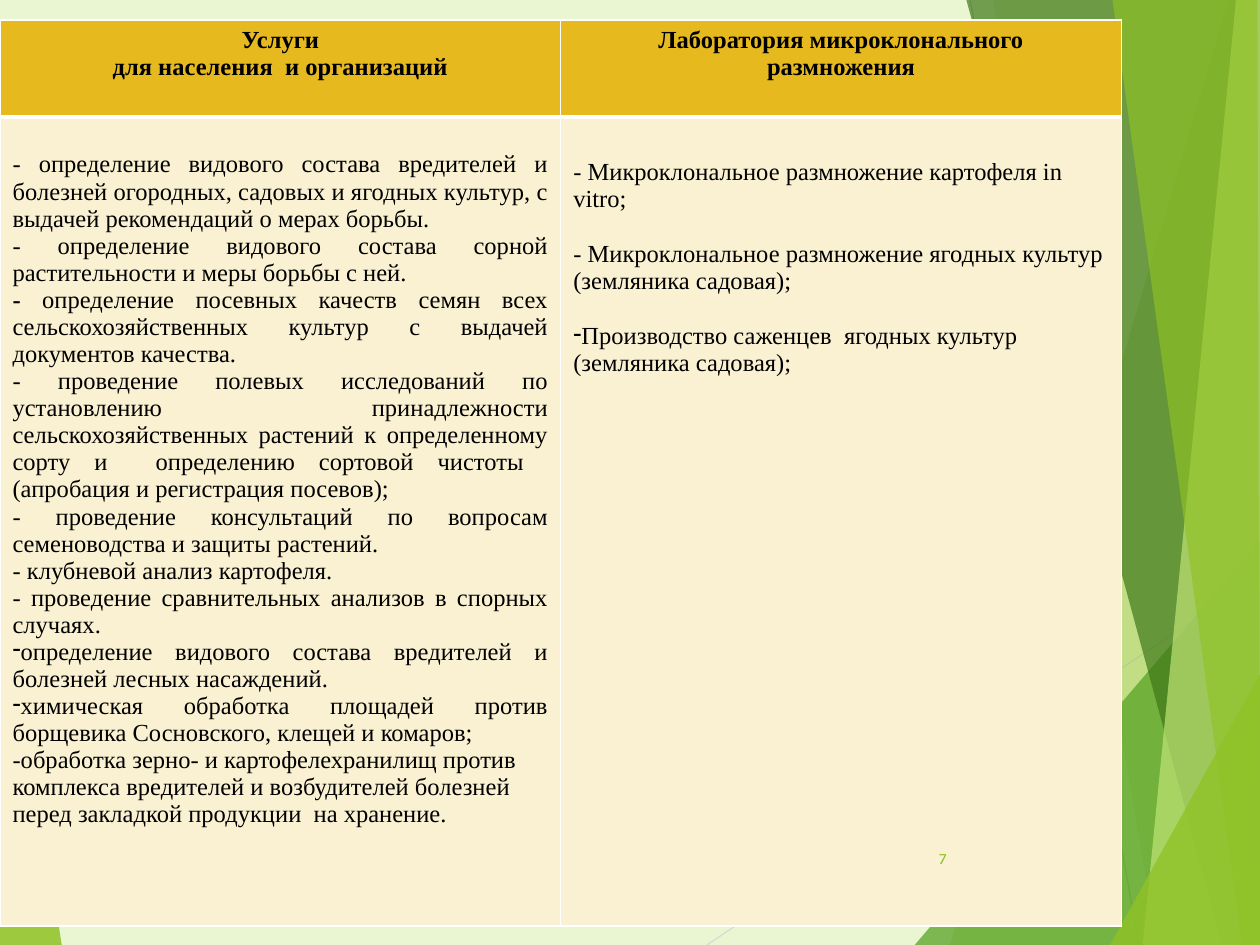
from typing import NamedTuple

from lxml import etree
from pptx import Presentation
from pptx import util as u
from pptx.dml.color import RGBColor
from pptx.enum import shapes, text
from pptx.oxml import ns

HEX = {
    "back": "EAF6D1", "lime": "90C226", "leaf": "54A021", "moss": "3F7819",
    "pale": "C0E474", "grey": "D9D9D9", "dusk": "BFBFBF", "gold": "E6B91E",
    "cream": "FAF1D2", "white": "FFFFFF", "black": "000000",
}
SERIF = "Times New Roman"
LEFT, MID, RIGHT = text.PP_ALIGN.LEFT, text.PP_ALIGN.CENTER, text.PP_ALIGN.RIGHT
JUST = text.PP_ALIGN.JUSTIFY


class Facet(NamedTuple):
    tint: str
    alpha: int
    spots: list[tuple[float, float]]


class Ray(NamedTuple):
    tint: str
    start: tuple[float, float]
    end: tuple[float, float]


class Run(NamedTuple):
    words: str
    bold: bool = False


class Para(NamedTuple):
    runs: list[Run]
    align: int = LEFT
    dash: bool = False
    gap: float = 0


class Cell(NamedTuple):
    fill: str
    paras: list[Para]
    top: float = 0.05


RAYS = [
    Ray("grey", (5.61, 7.5), (10, 4.57)),
    Ray("dusk", (7.7, 0), (9.04, 7.5)),
]
CORNER = Facet("lime", 85, [(0, 4.39), (0.49, 7.5), (0, 7.5)])
FACETS = [
    Facet("lime", 30, [(9.75, 0), (7.54, 7.5), (10, 7.5), (10, 0)]),
    Facet("lime", 20, [(7.88, 0), (9.19, 7.5), (10, 7.5), (10, 0)]),
    Facet("leaf", 72, [(7.26, 7.5), (10, 4.29), (10, 7.5)]),
    Facet("moss", 70, [(7.67, 0), (9.7, 7.5), (10, 7.5), (10, 0)]),
    Facet("pale", 70, [(9.81, 0), (9.07, 7.5), (10, 7.5), (10, 0)]),
    Facet("lime", 65, [(8.83, 0), (9.86, 7.5), (10, 7.5), (9.98, 0)]),
    Facet("lime", 80, [(8.81, 7.5), (10, 5.35), (10, 7.5)]),
]


def head(*lines: str) -> Cell:
    return Cell("gold", [Para([Run(line, True)], MID) for line in lines])


def just(words: str, dash: bool = False) -> Para:
    return Para([Run(words)], JUST, dash)


TASKS = [
    just("- определение видового состава вредителей и болезней огородных, садовых "
         "и ягодных культур, с выдачей рекомендаций о мерах борьбы."),
    just("- определение видового состава сорной растительности и меры борьбы с ней."),
    Para([Run("-", True),
          Run(" определение посевных качеств семян всех сельскохозяйственных "
              "культур с выдачей документов качества.")], JUST),
    just("- проведение полевых исследований по установлению принадлежности "
         "сельскохозяйственных растений к определенному сорту и  определению "
         "сортовой чистоты  (апробация и регистрация посевов);"),
    just("- проведение консультаций по вопросам семеноводства и защиты растений."),
    just("- клубневой анализ картофеля."),
    just("- проведение сравнительных анализов в спорных случаях."),
    just("определение видового состава вредителей и болезней лесных насаждений.", True),
    just("химическая обработка площадей против борщевика Сосновского, "
         "клещей и комаров;", True),
    Para([Run("-обработка зерно- и картофелехранилищ против комплекса вредителей "
              "и возбудителей болезней перед закладкой продукции  на хранение.")]),
]
LAB = [
    Para([Run("- Микроклональное размножение картофеля in vitro;")]),
    Para([Run("- Микроклональное размножение ягодных культур "
              "(земляника садовая);")], gap=16),
    Para([Run("Производство саженцев  ягодных культур "
              "(земляника садовая);")], dash=True, gap=16),
]
GRID = [
    [head("Услуги", "для населения  и организаций"),
     head("Лаборатория микроклонального", "размножения")],
    [Cell("cream", TASKS, 0.27), Cell("cream", LAB, 0.33)],
]


def paint(fill, tint: str) -> None:
    fill.solid()
    fill.fore_color.rgb = RGBColor.from_string(HEX[tint])


def draw_facet(slide, facet: Facet) -> None:
    spots = [(u.Inches(x), u.Inches(y)) for x, y in facet.spots]
    pen = slide.shapes.build_freeform(*spots[0])
    pen.add_line_segments(spots[1:], close=True)
    shape = pen.convert_to_shape()
    shape.shadow.inherit = False
    paint(shape.fill, facet.tint)
    shape.line.fill.background()
    tone = shape.fill._xPr.find(".//" + ns.qn("a:srgbClr"))
    etree.SubElement(tone, ns.qn("a:alpha"), val=str(facet.alpha * 1000))


def draw_ray(slide, ray: Ray) -> None:
    ends = [u.Inches(v) for v in ray.start + ray.end]
    line = slide.shapes.add_connector(shapes.MSO_CONNECTOR.STRAIGHT, *ends)
    paint(line.line.fill, ray.tint)
    line.line.width = u.Pt(0.75)
    etree.SubElement(line._element.spPr, ns.qn("a:effectLst"))


def add_run(para, run: Run, size: float, face: str, tint: str) -> None:
    part = para.add_run()
    part.text = run.words
    part.font.size, part.font.name = u.Pt(size), face
    part.font.bold = run.bold
    part.font.color.rgb = RGBColor.from_string(HEX[tint])


def write(frame, paras: list[Para], size: float, face: str, tint: str) -> None:
    for i, item in enumerate(paras):
        para = frame.add_paragraph() if i else frame.paragraphs[0]
        para.alignment = item.align
        if item.gap:
            para.space_before = u.Pt(item.gap)
        if item.dash:
            props = para._p.get_or_add_pPr()
            props.set("marL", "0")
            props.set("indent", "0")
            etree.SubElement(props, ns.qn("a:buFontTx"))
            etree.SubElement(props, ns.qn("a:buChar"), char="-")
        for run in item.runs:
            add_run(para, run, size, face, tint)


def edge(cell, widths: dict[str, float]) -> None:
    """Give the cell white borders; widths must run L, R, T, B, ahead of the fill."""
    props = cell._tc.get_or_add_tcPr()
    for i, (side, width) in enumerate(widths.items()):
        line = etree.Element(ns.qn(f"a:ln{side}"), w=str(u.Pt(width)))
        solid = etree.SubElement(line, ns.qn("a:solidFill"))
        etree.SubElement(solid, ns.qn("a:srgbClr"), val=HEX["white"])
        props.insert(i, line)


def draw_table(slide) -> None:
    box = [u.Inches(v) for v in (0, 0.16, 8.9, 7.19)]
    table = slide.shapes.add_table(2, 2, *box).table
    for col in table.columns:
        col.width = u.Inches(4.45)
    for r, (row, high) in enumerate(zip(GRID, (0.77, 6.42))):
        table.rows[r].height = u.Inches(high)
        for c, item in enumerate(row):
            cell = table.cell(r, c)
            cell.margin_top = u.Inches(item.top)
            paint(cell.fill, item.fill)
            edge(cell, {"L": 1, "R": 1, "T": 3 if r else 1, "B": 1 if r else 3})
            write(cell.text_frame, item.paras, 14, SERIF, "black")


def draw_number(slide) -> None:
    box = [u.Inches(v) for v in (7.05, 6.61, 0.56, 0.4)]
    frame = slide.shapes.add_textbox(*box).text_frame
    frame.word_wrap = True
    frame.vertical_anchor = text.MSO_ANCHOR.MIDDLE
    write(frame, [Para([Run("7")], RIGHT)], 9, "Karla", "lime")


def main() -> None:
    deck = Presentation()
    deck.slide_width, deck.slide_height = u.Inches(10), u.Inches(7.5)
    slide = deck.slides.add_slide(deck.slide_layouts[6])
    paint(slide.background.fill, "back")
    draw_facet(slide, CORNER)
    for ray in RAYS:
        draw_ray(slide, ray)
    for facet in FACETS:
        draw_facet(slide, facet)
    draw_table(slide)
    draw_number(slide)
    deck.save("out.pptx")


if __name__ == "__main__":
    main()
